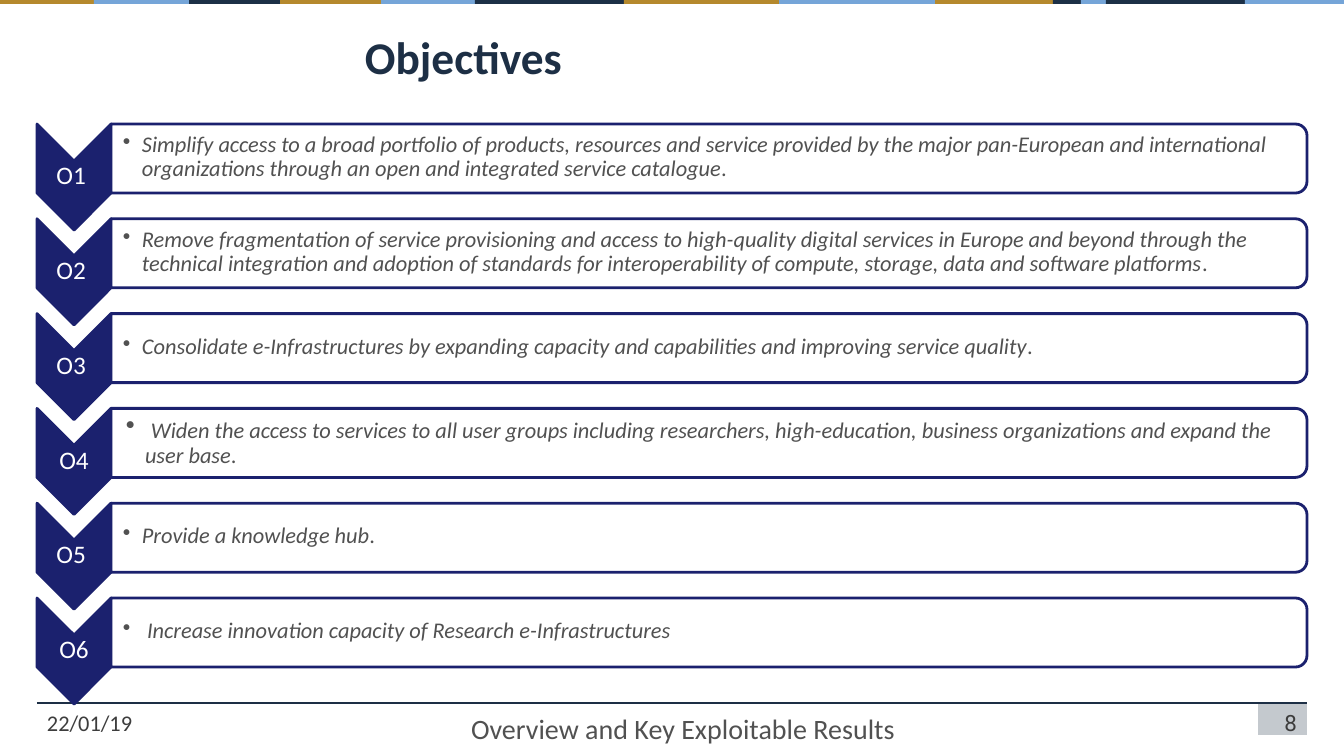
from dataclasses import dataclass

from lxml.etree import SubElement
from pptx import Presentation
from pptx.dml.color import RGBColor
from pptx.enum.shapes import MSO_CONNECTOR as Connector, MSO_SHAPE as Shape
from pptx.enum.text import MSO_ANCHOR as Anchor, MSO_AUTO_SIZE as AutoSize, PP_ALIGN as Align
from pptx.oxml.ns import qn
from pptx.util import Pt

TITLE = "Objectives"
DATE = "22/01/19"
FOOTER = "Overview and Key Exploitable Results"
PAGE = "8"

OBJECTIVES = [
    ("O1 ", "", "Simplify access to a broad portfolio of products, resources and service provided by the major "
     "pan-European and international organizations through an open and integrated service catalogue", "."),
    ("O2 ", "", "Remove fragmentation of service provisioning and access to high-quality digital services in "
     "Europe and beyond through the technical integration and adoption of standards for interoperability of "
     "compute, storage, data and software platforms", "."),
    ("O3 ", "", "Consolidate e-Infrastructures by expanding capacity and capabilities and improving service "
     "quality", "."),
    ("O4", " ", "Widen the access to services to all user groups including researchers, high-education, "
     "business organizations and expand the user base", "."),
    ("O5 ", "", "Provide a knowledge hub", "."),
    ("O6", " ", "Increase innovation capacity of Research e-Infrastructures", ""),
]
LARGE_LEADS = {"O4": (19, 15)}


@dataclass(frozen=True)
class Theme:
    font: str = "Calibri"
    number_font: str = "Roboto"
    navy: str = "1C3046"
    ink: str = "1D2F45"
    gold: str = "B5892D"
    blue: str = "75A5D8"
    indigo: str = "1B216E"
    white: str = "FFFFFF"
    body: str = "515151"
    small: str = "3D3D3D"
    title_size: float = 32.4
    footer_size: int = 20
    label_size: int = 18
    body_size: int = 16


theme = Theme()
STRIPES = [
    (theme.gold, 94), (theme.blue, 189), (theme.navy, 280), (theme.gold, 381), (theme.blue, 475),
    (theme.navy, 624), (theme.gold, 779), (theme.blue, 935), (theme.gold, 1053), (theme.navy, 1081),
    (theme.blue, 1106), (theme.navy, 1245), (theme.blue, 1344),
]

WIDTH, HEIGHT = 1344, 756
LEFT, RIGHT = 37, 1307
FIRST_TOP, LAST_TOP = 124, 598
CHEVRON_WIDTH, CHEVRON_HEIGHT = 74, 106
PANEL_HEIGHT = 69
PANEL_LEFT = LEFT + CHEVRON_WIDTH
RULE_Y = 703


def px(value):
    return round(value * 914400 / 100.8)


def add_box(slide, kind, left, top, width, height, fill, line=None, opacity=100):
    shape = slide.shapes.add_shape(kind, px(left), px(top), px(width), px(height))
    shape.shadow.inherit = False
    shape.fill.solid()
    shape.fill.fore_color.rgb = RGBColor.from_string(fill)
    if opacity < 100:
        color = shape.fill._xPr.find(qn("a:solidFill"))[0]
        SubElement(color, qn("a:alpha"), val=str(opacity * 1000))
    if line:
        shape.line.color.rgb = RGBColor.from_string(line)
        shape.line.width = Pt(2)
    else:
        shape.line.fill.background()
    return shape


def add_turned(slide, kind, left, top, width, height, fill, line, opacity=100):
    shift = (width - height) / 2
    shape = add_box(slide, kind, left + shift, top - shift, height, width, fill, line, opacity)
    shape.rotation = 90


def format_run(run, size, color, font=theme.font, italic=False, bold=False):
    run.font.name = font
    run.font.size = Pt(size)
    run.font.color.rgb = RGBColor.from_string(color)
    run.font.italic = italic
    run.font.bold = bold


def add_text(slide, left, top, width, height, margins=(10, 5, 10, 5), anchor=Anchor.TOP):
    frame = slide.shapes.add_textbox(px(left), px(top), px(width), px(height)).text_frame
    frame.word_wrap = True
    frame.vertical_anchor = anchor
    frame.margin_left, frame.margin_top, frame.margin_right, frame.margin_bottom = map(px, margins)
    return frame.paragraphs[0]


def add_line_of_text(slide, box, text, size, color, align, font=theme.font):
    paragraph = add_text(slide, *box)
    paragraph.text = text
    paragraph.alignment = align
    format_run(paragraph.runs[0], size, color, font)


def add_objective(slide, top, label, lead, statement, stop):
    lead_size, inset = LARGE_LEADS.get(label, (theme.body_size, 12))
    add_turned(slide, Shape.CHEVRON, LEFT, top, CHEVRON_WIDTH, CHEVRON_HEIGHT, theme.indigo, theme.indigo)
    paragraph = add_text(slide, LEFT, top + 37, CHEVRON_WIDTH, 31, (1, 1, 1, 1), Anchor.MIDDLE)
    paragraph.text = label
    paragraph.alignment = Align.CENTER
    paragraph.line_spacing = 0.9
    format_run(paragraph.runs[0], theme.label_size, theme.white)

    add_turned(slide, Shape.ROUND_2_SAME_RECTANGLE, PANEL_LEFT, top, RIGHT - PANEL_LEFT, PANEL_HEIGHT,
               theme.white, theme.indigo, 90)
    paragraph = add_text(slide, PANEL_LEFT, top + 3, 1192, 61, (inset, 1, 1, 1), Anchor.MIDDLE)
    paragraph.level = 1
    paragraph.line_spacing = 0.9
    properties = paragraph._p.get_or_add_pPr()
    properties.set("marL", str(px(19)))
    properties.set("indent", str(px(-19)))
    SubElement(properties, qn("a:buChar"), char="•")
    for text, size, italic in ((lead, lead_size, False), (statement, theme.body_size, True),
                               (stop, theme.body_size, False)):
        if text:
            run = paragraph.add_run()
            run.text = text
            format_run(run, size, theme.body, italic=italic)


def add_title(slide):
    title = slide.shapes.title
    title.left, title.top, title.width, title.height = map(px, (355, 21, 952, 59))
    frame = title.text_frame
    frame.text = TITLE
    frame.auto_size = AutoSize.NONE
    frame.vertical_anchor = Anchor.TOP
    frame.margin_left, frame.margin_top = px(10), px(8)
    frame.paragraphs[0].alignment = Align.LEFT
    format_run(frame.paragraphs[0].runs[0], theme.title_size, theme.ink, bold=True)


def add_frame(slide):
    start = 0
    for color, end in STRIPES:
        add_box(slide, Shape.RECTANGLE, start, 0, end - start, 4, color)
        start = end
    add_box(slide, Shape.RECTANGLE, 1258, RULE_Y, 49, 32, theme.ink, opacity=26)
    rule = slide.shapes.add_connector(Connector.STRAIGHT, px(LEFT), px(RULE_Y), px(RIGHT), px(RULE_Y))
    rule.line.color.rgb = RGBColor.from_string(theme.ink)
    rule.line.width = Pt(1)
    SubElement(rule._element.spPr, qn("a:effectLst"))


def main():
    presentation = Presentation()
    presentation.slide_width, presentation.slide_height = px(WIDTH), px(HEIGHT)
    slide = presentation.slides.add_slide(presentation.slide_layouts[5])
    add_frame(slide)
    add_title(slide)
    pitch = (LAST_TOP - FIRST_TOP) / (len(OBJECTIVES) - 1)
    for index, objective in enumerate(OBJECTIVES):
        add_objective(slide, FIRST_TOP + index * pitch, *objective)
    add_line_of_text(slide, (LEFT, 704, 313, 31), DATE, theme.body_size, theme.small, Align.LEFT)
    add_line_of_text(slide, (963, 704, 344, 31), PAGE, theme.body_size, theme.small, Align.RIGHT,
                     theme.number_font)
    add_line_of_text(slide, (386, 706, 594, 44), FOOTER, theme.footer_size, theme.body, Align.CENTER)
    presentation.save("out.pptx")


if __name__ == "__main__":
    main()
